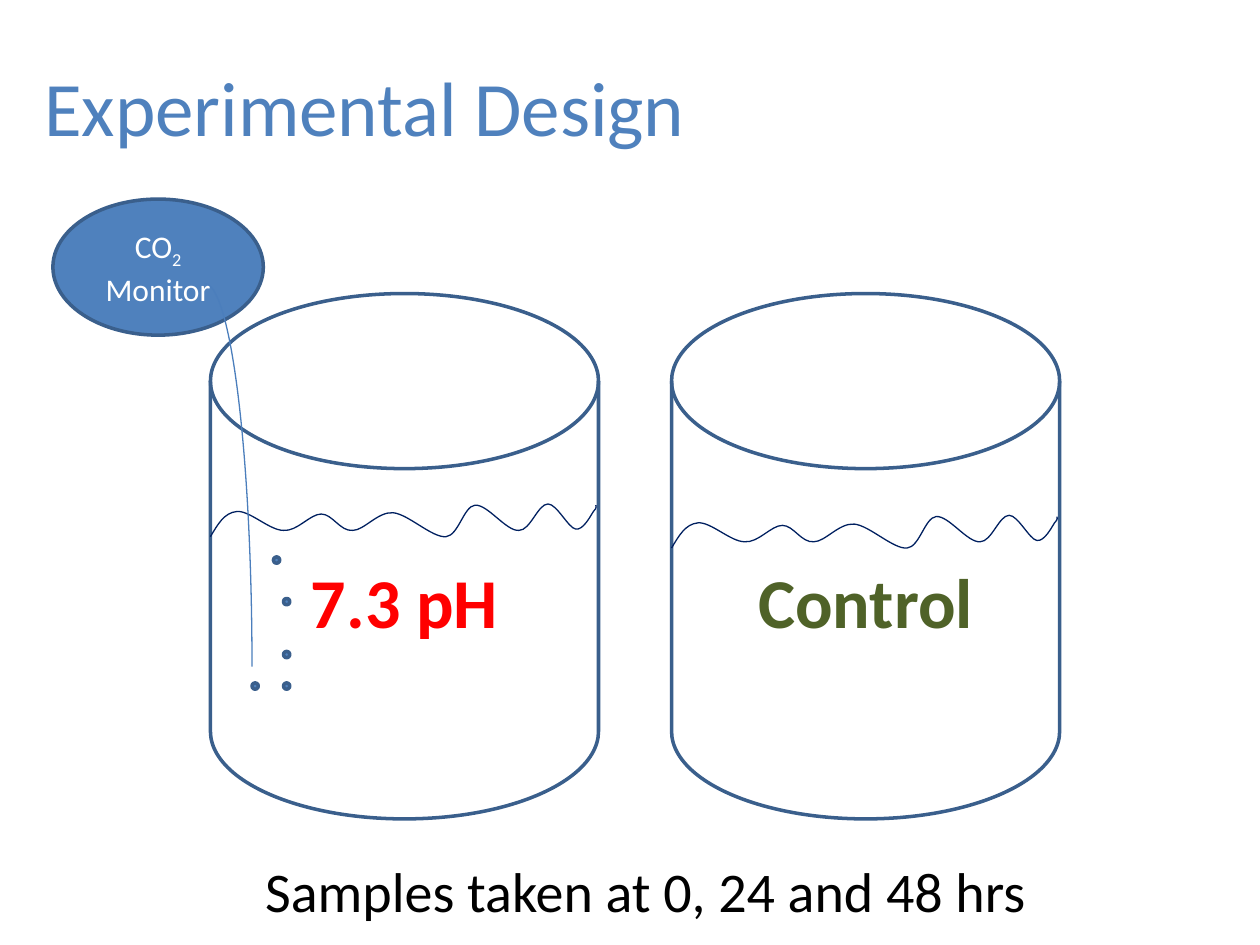
"""Build the experimental design slide with two water tanks and a CO2 monitor."""
from lxml import etree
from pptx import Presentation
from pptx.dml.color import RGBColor
from pptx.enum.shapes import MSO_SHAPE
from pptx.enum.text import MSO_ANCHOR, MSO_AUTO_SIZE, PP_ALIGN
from pptx.oxml.ns import qn
from pptx.util import Inches, Pt

TANK, ELLIPSE, ARC = MSO_SHAPE.FLOWCHART_MAGNETIC_DISK, MSO_SHAPE.OVAL, MSO_SHAPE.ARC
CENTER, LEFT = PP_ALIGN.CENTER, PP_ALIGN.LEFT
MIDDLE = MSO_ANCHOR.MIDDLE
FIT_SHAPE, NO_FIT = MSO_AUTO_SIZE.SHAPE_TO_FIT_TEXT, MSO_AUTO_SIZE.NONE

FONT = "Calibri"
COLORS = {"blue": "4F81BD", "outline": "3A5F8C", "tube": "4B7EBC", "water": "002060",
          "red": "FF0000", "green": "4F6228", "white": "FFFFFF", "black": "000000"}

WAVE_START = (1.67, 4.26)
WAVE_CURVES = [
    ((1.73, 4.16), (1.78, 4.07), (1.88, 4.06)),
    ((1.98, 4.05), (2.14, 4.21), (2.25, 4.21)),
    ((2.36, 4.22), (2.46, 4.08), (2.55, 4.08)),
    ((2.64, 4.08), (2.70, 4.22), (2.80, 4.21)),
    ((2.89, 4.21), (3.00, 4.06), (3.12, 4.07)),
    ((3.24, 4.08), (3.43, 4.27), (3.54, 4.26)),
    ((3.64, 4.25), (3.68, 4.02), (3.77, 4.01)),
    ((3.87, 4.00), (4.02, 4.22), (4.12, 4.21)),
    ((4.21, 4.21), (4.27, 4.00), (4.35, 4.00)),
    ((4.42, 4.00), (4.51, 4.19), (4.57, 4.20)),
    ((4.63, 4.21), (4.69, 4.09), (4.71, 4.06)),
    ((4.74, 4.03), (4.73, 4.02), (4.73, 4.01)),
]
BUBBLES = [(2, 5.42), (2.25, 5.17), (2.25, 4.75), (2.17, 4.42), (2.25, 5.42)]


def color(name):
    """Return the named colour."""
    return RGBColor.from_string(COLORS[name])


class SlideBuilder:
    """Hold the style and the current slide."""

    def __init__(self, slide):
        """Keep the slide to draw on."""
        self.slide = slide

    def style_text(self, paragraph, size, color_name, align=CENTER, bold=False):
        """Format a paragraph and its runs."""
        paragraph.alignment = align
        for run in paragraph.runs:
            run.font.name = FONT
            run.font.size = Pt(size)
            run.font.bold = bold
            run.font.color.rgb = color(color_name)

    def style_shape(self, shape, line, width, fill=None):
        """Set outline and fill without a shadow."""
        shape.shadow.inherit = False
        shape.line.color.rgb = color(line)
        shape.line.width = Pt(width)
        if fill:
            shape.fill.solid()
            shape.fill.fore_color.rgb = color(fill)
        else:
            shape.fill.background()

    def shape(self, kind, box, line="outline", width=2, fill=None):
        """Add a preset shape."""
        shape = self.slide.shapes.add_shape(kind, *map(Inches, box))
        self.style_shape(shape, line, width, fill)
        return shape

    def title(self, text, box):
        """Fill and place the title placeholder."""
        title = self.slide.shapes.title
        title.left, title.top, title.width, title.height = map(Inches, box)
        title.text_frame.text = text
        title.text_frame.auto_size = NO_FIT
        title.text_frame.vertical_anchor = MIDDLE
        self.style_text(title.text_frame.paragraphs[0], 44, "blue", LEFT)

    def tank(self, left, label, color_name):
        """Add a labelled tank."""
        tank = self.shape(TANK, (left, 2.33, 3.08, 4.17))
        tank.text_frame.text = label
        tank.text_frame.vertical_anchor = MIDDLE
        self.style_text(tank.text_frame.paragraphs[0], 40, color_name, bold=True)

    def water(self, shift_x, shift_y):
        """Add a wavy water surface made of cubic curves."""
        def place(point):
            return Inches(point[0] + shift_x), Inches(point[1] + shift_y)

        builder = self.slide.shapes.build_freeform(*place(WAVE_START))
        builder.add_line_segments([place(curve[-1]) for curve in WAVE_CURVES], close=False)
        surface = builder.convert_to_shape()
        self.style_shape(surface, "water", 0.75)
        segments = list(surface.element.iter(qn("a:lnTo")))
        for segment, curve in zip(segments, WAVE_CURVES):
            bezier = etree.SubElement(segment.getparent(), qn("a:cubicBezTo"))
            for x, y in map(place, curve):
                etree.SubElement(bezier, qn("a:pt"),
                                 x=str(x - surface.left), y=str(y - surface.top))
            segment.getparent().replace(segment, bezier)

    def monitor(self, box):
        """Add the monitor with its subscripted label."""
        monitor = self.shape(ELLIPSE, box, fill="blue")
        monitor.text_frame.vertical_anchor = MIDDLE
        paragraph = monitor.text_frame.paragraphs[0]
        for text in ("CO", "2", " Monitor"):
            paragraph.add_run().text = text
        self.style_text(paragraph, 18, "white")
        paragraph.runs[1]._r.get_or_add_rPr().set("baseline", "-25000")

    def caption(self, text, box):
        """Add the caption text box."""
        frame = self.slide.shapes.add_textbox(*map(Inches, box)).text_frame
        frame.word_wrap = True
        frame.auto_size = FIT_SHAPE
        frame.text = text
        paragraph = frame.paragraphs[0]
        paragraph.space_before, paragraph.space_after = Pt(6), Pt(18)
        self.style_text(paragraph, 32, "black")


def main():
    """Build and save the presentation."""
    presentation = Presentation()
    presentation.slide_width, presentation.slide_height = Inches(10), Inches(7.5)
    builder = SlideBuilder(presentation.slides.add_slide(presentation.slide_layouts[5]))
    builder.title("Experimental Design", (0.25, 0.42, 9.42, 0.83))
    builder.tank(1.67, "7.3 pH", "red")
    builder.tank(5.33, "Control", "green")
    builder.water(0, 0)
    builder.water(3.66, 0.09)
    builder.monitor((0.42, 1.58, 1.67, 1.08))
    builder.shape(ARC, (1.25, 2.25, 0.75, 6.08), "tube", 0.75)
    for left, top in BUBBLES:
        builder.shape(ELLIPSE, (left, top, 0.05, 0.05), fill="blue")
    builder.caption("Samples taken at 0, 24 and 48 hrs", (1, 6.75, 8.25, 0.64))
    presentation.save("out.pptx")


if __name__ == "__main__":
    main()
